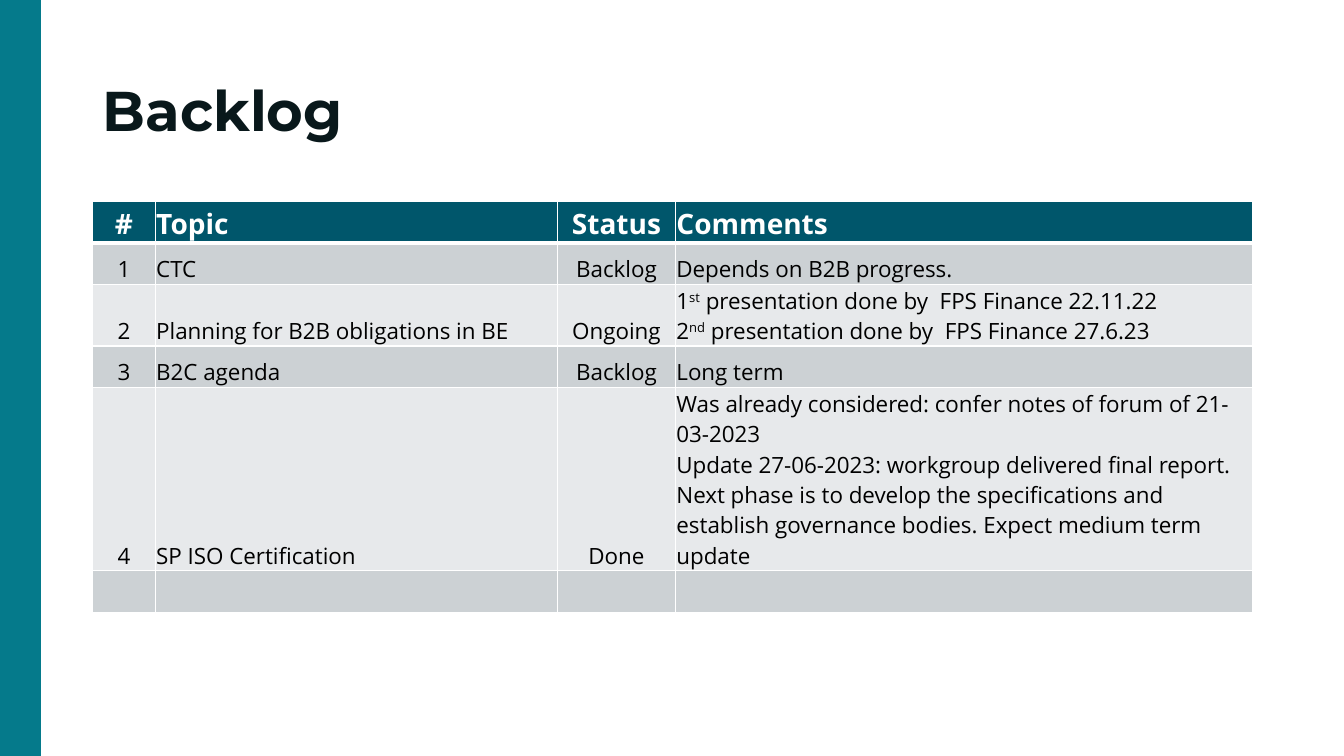
from lxml import etree
from pptx import Presentation
from pptx import util as u
from pptx.dml.color import RGBColor
from pptx.enum import shapes, text
from pptx.oxml import ns

TEAL = RGBColor(0x05, 0x7A, 0x8B)
DARK_TEAL = RGBColor(0x00, 0x56, 0x6B)
INK = RGBColor(0x09, 0x18, 0x1B)
BLACK = RGBColor(0, 0, 0)
WHITE = RGBColor(0xFF, 0xFF, 0xFF)
BANDS = [RGBColor(0xE7, 0xE9, 0xEB), RGBColor(0xCC, 0xD1, 0xD4)]

LEFT, WIDTH = u.Inches(0.92), u.Inches(11.5)
COLUMN_WIDTHS = [0.62, 3.99, 1.17, 5.72]
ROW_HEIGHT = u.Inches(0.41)
CENTRED_COLUMNS = (0, 2)

# Text between ^ marks is superscript; each list item is a paragraph.
ROWS = [
    ["#", "Topic", "Status", "Comments"],
    ["1", "CTC", "Backlog", "Depends on B2B progress."],
    ["2", "Planning for B2B obligations in BE", "Ongoing",
     "1^st^ presentation done by  FPS Finance 22.11.22\v"
     "2^nd^ presentation done by  FPS Finance 27.6.23"],
    ["3", "B2C agenda", "Backlog", "Long term"],
    ["4", "SP ISO Certification", "Done",
     ["Was already considered: confer notes of forum of 21-03-2023",
      "Update 27-06-2023: workgroup delivered final report. Next phase is to "
      "develop the specifications and establish governance bodies. "
      "Expect medium term update"]],
    ["", "", "", ""],
]


def write(paragraph, content, font="Open Sans", size=16, color=BLACK,
          bold=False, align=text.PP_ALIGN.LEFT):
    """Fill a paragraph; ^ toggles superscript and \\v breaks the line."""
    paragraph.alignment = align
    paragraph.font.size = u.Pt(size)
    for line_number, line in enumerate(content.split("\v")):
        if line_number:
            paragraph.add_line_break()
        for part_number, part in enumerate(line.split("^")):
            if not part:
                continue
            run = paragraph.add_run()
            run.text = part
            run.font.name, run.font.size = font, u.Pt(size)
            run.font.bold, run.font.color.rgb = bold, color
            if part_number % 2:
                run.font._element.set("baseline", "30000")


def add_borders(cell, bottom_width):
    properties = cell._tc.get_or_add_tcPr()
    for side in "LRTB":
        width = u.Pt(bottom_width if side == "B" else 1)
        line = etree.SubElement(properties, ns.qn(f"a:ln{side}"), w=str(width))
        fill = etree.SubElement(line, ns.qn("a:solidFill"))
        etree.SubElement(fill, ns.qn("a:srgbClr"), val=str(WHITE))


presentation = Presentation()
presentation.slide_width = u.Inches(13.33)
presentation.slide_height = u.Inches(7.5)
slide = presentation.slides.add_slide(presentation.slide_layouts[5])
slide.background.fill.solid()
slide.background.fill.fore_color.rgb = WHITE

# Side bar
side_bar = slide.shapes.add_connector(
    shapes.MSO_CONNECTOR.STRAIGHT,
    u.Inches(0.2), u.Inches(-0.08), u.Inches(0.2), u.Inches(7.59))
side_bar.line.color.rgb = TEAL
side_bar.line.width = u.Pt(30)
etree.SubElement(side_bar._element.spPr, ns.qn("a:effectLst"))

# Title
title = slide.shapes.title
title.left, title.top = LEFT, u.Inches(0.4)
title.width, title.height = WIDTH, u.Inches(1.45)
title.text_frame.auto_size = text.MSO_AUTO_SIZE.NONE
title.text_frame.vertical_anchor = text.MSO_ANCHOR.MIDDLE
heading = title.text_frame.paragraphs[0]
heading.line_spacing = 0.9
write(heading, "Backlog", font="Montserrat", size=40, color=INK, bold=True)

# Backlog table
table = slide.shapes.add_table(
    len(ROWS), len(COLUMN_WIDTHS), LEFT, u.Inches(2), WIDTH,
    ROW_HEIGHT * len(ROWS)).table
for column, width in zip(table.columns, COLUMN_WIDTHS):
    column.width = u.Inches(width)

for row_number, row in enumerate(ROWS):
    table.rows[row_number].height = ROW_HEIGHT
    is_header = row_number == 0
    style = dict(size=20, color=WHITE, bold=True) if is_header else {}
    for column_number, content in enumerate(row):
        cell = table.cell(row_number, column_number)
        add_borders(cell, bottom_width=3 if is_header else 1)
        cell.fill.solid()
        cell.fill.fore_color.rgb = DARK_TEAL if is_header else BANDS[row_number % 2]
        cell.margin_left = cell.margin_right = cell.margin_top = u.Inches(0.01)
        cell.margin_bottom = 0
        cell.vertical_anchor = text.MSO_ANCHOR.BOTTOM
        centred = column_number in CENTRED_COLUMNS
        align = text.PP_ALIGN.CENTER if centred else text.PP_ALIGN.LEFT
        paragraphs = content if isinstance(content, list) else [content]
        for number, line in enumerate(paragraphs):
            frame = cell.text_frame
            paragraph = frame.add_paragraph() if number else frame.paragraphs[0]
            write(paragraph, line, align=align, **style)

presentation.save("out.pptx")
